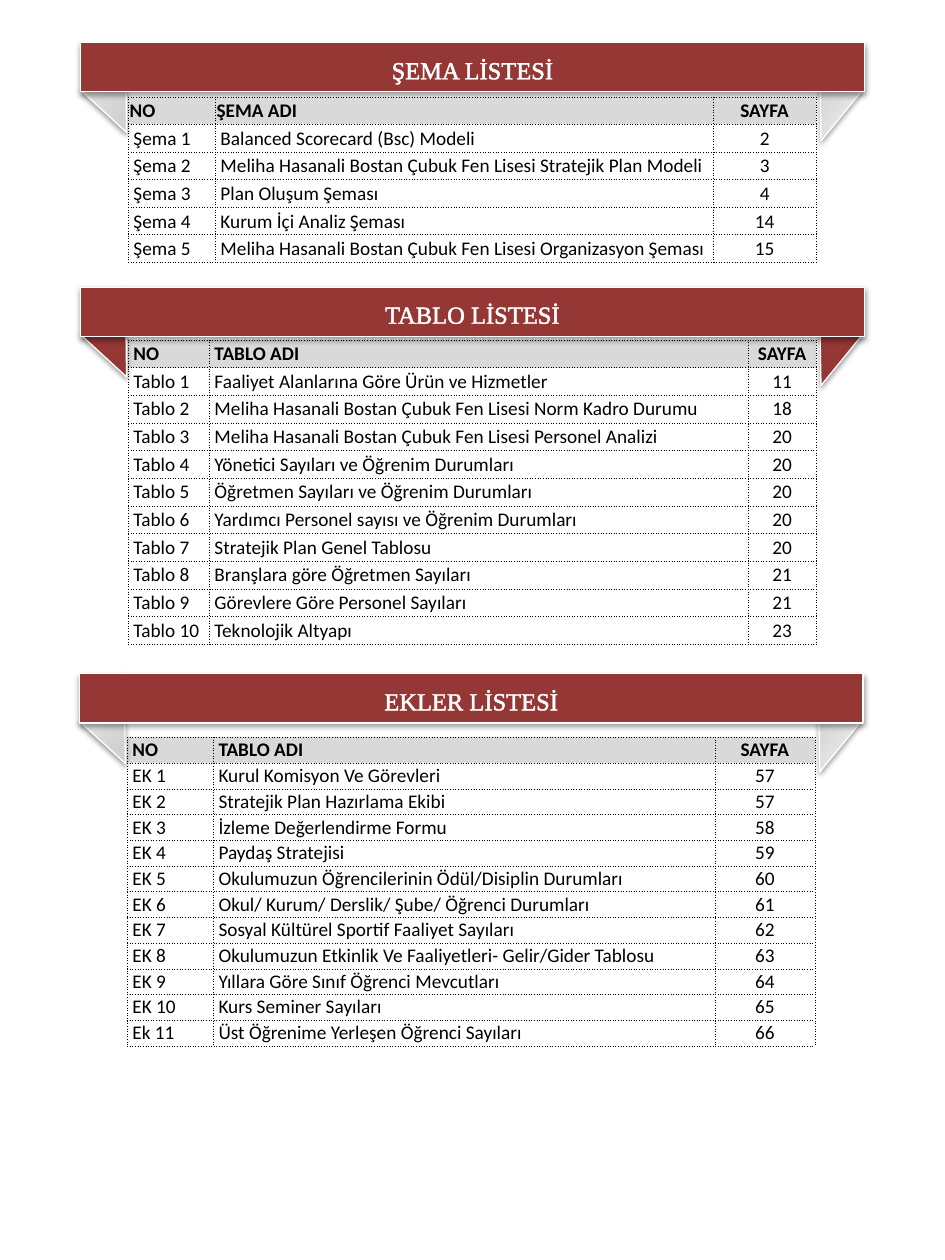
from lxml import etree
from pptx import Presentation
from pptx.dml.color import RGBColor as RGB
from pptx.enum.shapes import MSO_SHAPE as Kind
from pptx.enum.text import MSO_ANCHOR as Anchor, PP_ALIGN as Align
from pptx.oxml import parse_xml
from pptx.oxml.ns import qn
from pptx.util import Pt

HUES = {"red": "953735", "white": "FFFFFF", "black": "000000", "head": "D9D9D9"}
FADE = [(0, "BDBDBD"), (35, "D1D1D1"), (100, "EEEEEE")]
NS = 'xmlns:a="http://schemas.openxmlformats.org/drawingml/2006/main"'
SCHOOL = "Meliha Hasanali Bostan Çubuk Fen Lisesi"

# Content: rows are (name, page); numbers come from the row's place
LISTS = [
    {"title": "ŞEMA LİSTESİ", "head": ("NO", "ŞEMA ADI", "SAYFA"), "tag": "Şema",
     "spot": (46.1, 24.4), "fold": None, "front": False,
     "grid": (73.4, 55.4), "cols": (49.7, 284.4, 59), "row": 15.75,
     "pad": (2.9, 0.7), "inset": 0.7,
     "rows": [("Balanced Scorecard (Bsc) Modeli", 2),
              (f"{SCHOOL} Stratejik Plan Modeli", 3),
              ("Plan Oluşum Şeması", 4),
              ("Kurum İçi Analiz Şeması", 14),
              (f"{SCHOOL} Organizasyon Şeması", 15)]},
    {"title": "TABLO LİSTESİ", "head": ("NO", "TABLO ADI", "SAYFA"), "tag": "Tablo",
     "spot": (46.1, 164.1), "fold": "red", "front": True,
     "grid": (73.4, 194.2), "cols": (46.3, 307.8, 39), "row": 15.84,
     "pad": (2.9, 0), "inset": 2.9,
     "rows": [("Faaliyet Alanlarına Göre Ürün ve Hizmetler", 11),
              (f"{SCHOOL} Norm Kadro Durumu", 18),
              (f"{SCHOOL} Personel Analizi", 20),
              ("Yönetici Sayıları ve Öğrenim Durumları", 20),
              ("Öğretmen Sayıları ve Öğrenim Durumları", 20),
              ("Yardımcı Personel sayısı ve Öğrenim Durumları", 20),
              ("Stratejik Plan Genel Tablosu", 20),
              ("Branşlara göre Öğretmen Sayıları", 21),
              ("Görevlere Göre Personel Sayıları", 21),
              ("Teknolojik Altyapı", 23)]},
    {"title": "EKLER LİSTESİ", "head": ("NO", "TABLO ADI", "SAYFA"), "tag": "EK",
     "spot": (45.4, 385), "fold": None, "front": True,
     "grid": (72.8, 421.4), "cols": (49.2, 286.6, 57), "row": 14.7,
     "pad": (2.9, 0), "inset": 2.9,
     "rows": [("Kurul Komisyon Ve Görevleri", 57),
              ("Stratejik Plan Hazırlama Ekibi", 57),
              ("İzleme Değerlendirme Formu", 58),
              ("Paydaş Stratejisi", 59),
              ("Okulumuzun Öğrencilerinin Ödül/Disiplin Durumları", 60),
              ("Okul/ Kurum/ Derslik/ Şube/ Öğrenci Durumları", 61),
              ("Sosyal Kültürel Sportif Faaliyet Sayıları", 62),
              ("Okulumuzun Etkinlik Ve Faaliyetleri- Gelir/Gider Tablosu", 63),
              ("Yıllara Göre Sınıf Öğrenci Mevcutları", 64),
              ("Kurs Seminer Sayıları", 65),
              ("Üst Öğrenime Yerleşen Öğrenci Sayıları", 66)],
     "odd": {11: "Ek 11"}},
]

# Folds: offset from the banner, size, turn, stripe cut
FOLDS = [(7.2, 7.9, 37.4, 35.3, 312.6, 0), (403.9, 15.8, 37.4, 31.7, 129.3, 0.016)]
BAND = (447.8, 28.1)


def hue(name):
    return RGB.from_string(HUES[name])


def write(para, text, font, size, color, bold=False):
    run = para.add_run()
    run.text = text
    run.font.name, run.font.size, run.font.bold = font, Pt(size), bold
    run.font.color.rgb = hue(color)
    return run


def style(shape, fill):
    """White edge, soft shadow, and a flat fill or the grey fade."""
    shape.line.color.rgb = hue("white")
    shape.line.width = Pt(0.75)
    if fill:
        shape.fill.solid()
        shape.fill.fore_color.rgb = hue(fill)
    else:
        shape.fill.gradient()
        grad = shape.element.spPr.find(qn("a:gradFill"))
        stops = "".join(f'<a:gs pos="{p * 1000}"><a:srgbClr val="{c}"/></a:gs>' for p, c in FADE)
        grad.getparent().replace(grad, parse_xml(
            f'<a:gradFill {NS} rotWithShape="1"><a:gsLst>{stops}</a:gsLst>'
            '<a:lin ang="16200000" scaled="0"/></a:gradFill>'))
    shape.shadow.inherit = False
    glow = shape.element.spPr.find(qn("a:effectLst"))
    glow.append(parse_xml(
        f'<a:outerShdw {NS} blurRad="{Pt(3.1)}" dist="{Pt(1.6)}" dir="5400000" rotWithShape="0">'
        f'<a:srgbClr val="{HUES["black"]}"><a:alpha val="38000"/></a:srgbClr></a:outerShdw>'))


def ribbon(slide, part):
    group = slide.shapes.add_group_shape().shapes
    x, y = part["spot"]
    for dx, dy, w, h, turn, cut in FOLDS:
        fold = group.add_shape(Kind.DIAGONAL_STRIPE, Pt(x + dx), Pt(y + dy), Pt(w), Pt(h))
        fold.adjustments[0] = cut
        fold.rotation = turn
        style(fold, part["fold"])
    band = group.add_shape(Kind.RECTANGLE, Pt(x), Pt(y), Pt(BAND[0]), Pt(BAND[1]))
    style(band, "red")
    frame = band.text_frame
    frame.word_wrap = True
    frame.vertical_anchor = Anchor.MIDDLE
    para = frame.paragraphs[0]
    para.alignment, para.line_spacing, para.space_after = Align.CENTER, 1.15, Pt(8.9)
    run = write(para, part["title"], "Times New Roman", 14, "white")
    run.font.fill  # the text outline goes before the fill
    run.font._element.insert(0, parse_xml(
        f'<a:ln {NS} w="{Pt(1.45)}"><a:solidFill><a:srgbClr val="{HUES["white"]}"/>'
        '</a:solidFill><a:prstDash val="solid"/></a:ln>'))


def border(cell):
    props = cell._tc.get_or_add_tcPr()
    for side in ("lnL", "lnR", "lnT", "lnB"):
        line = etree.SubElement(props, qn(f"a:{side}"), w=str(Pt(0.25)))
        fill = etree.SubElement(line, qn("a:solidFill"))
        etree.SubElement(fill, qn("a:srgbClr"), val=HUES["black"])
        etree.SubElement(line, qn("a:prstDash"), val="sysDot")


def listing(slide, part):
    odd = part.get("odd", {})
    rows = [part["head"]] + [(odd.get(n, f"{part['tag']} {n}"), name, str(page))
                             for n, (name, page) in enumerate(part["rows"], 1)]
    x, y = part["grid"]
    table = slide.shapes.add_table(len(rows), 3, Pt(x), Pt(y), Pt(sum(part["cols"])),
                                   Pt(part["row"] * len(rows))).table
    table.first_row = table.horz_banding = False
    for col, width in zip(table.columns, part["cols"]):
        col.width = Pt(width)
    side, top = part["pad"]
    for r, row in enumerate(rows):
        table.rows[r].height = Pt(part["row"])
        for c, text in enumerate(row):
            cell = table.cell(r, c)
            cell.margin_left = cell.margin_right = Pt(side if r else part["inset"])
            cell.margin_top, cell.margin_bottom = Pt(top), Pt(0)
            cell.vertical_anchor = Anchor.MIDDLE
            border(cell)
            if r:
                cell.fill.background()
            else:
                cell.fill.solid()
                cell.fill.fore_color.rgb = hue("head")
            para = cell.text_frame.paragraphs[0]
            para.alignment = Align.CENTER if c == 2 else Align.LEFT
            write(para, text, "Calibri", 11, "black", r == 0)


def main():
    deck = Presentation()
    deck.slide_width, deck.slide_height = Pt(540), Pt(720)
    slide = deck.slides.add_slide(deck.slide_layouts[6])
    for part in LISTS:
        steps = (listing, ribbon) if part["front"] else (ribbon, listing)
        for step in steps:
            step(slide, part)
    deck.save("out.pptx")


if __name__ == "__main__":
    main()
